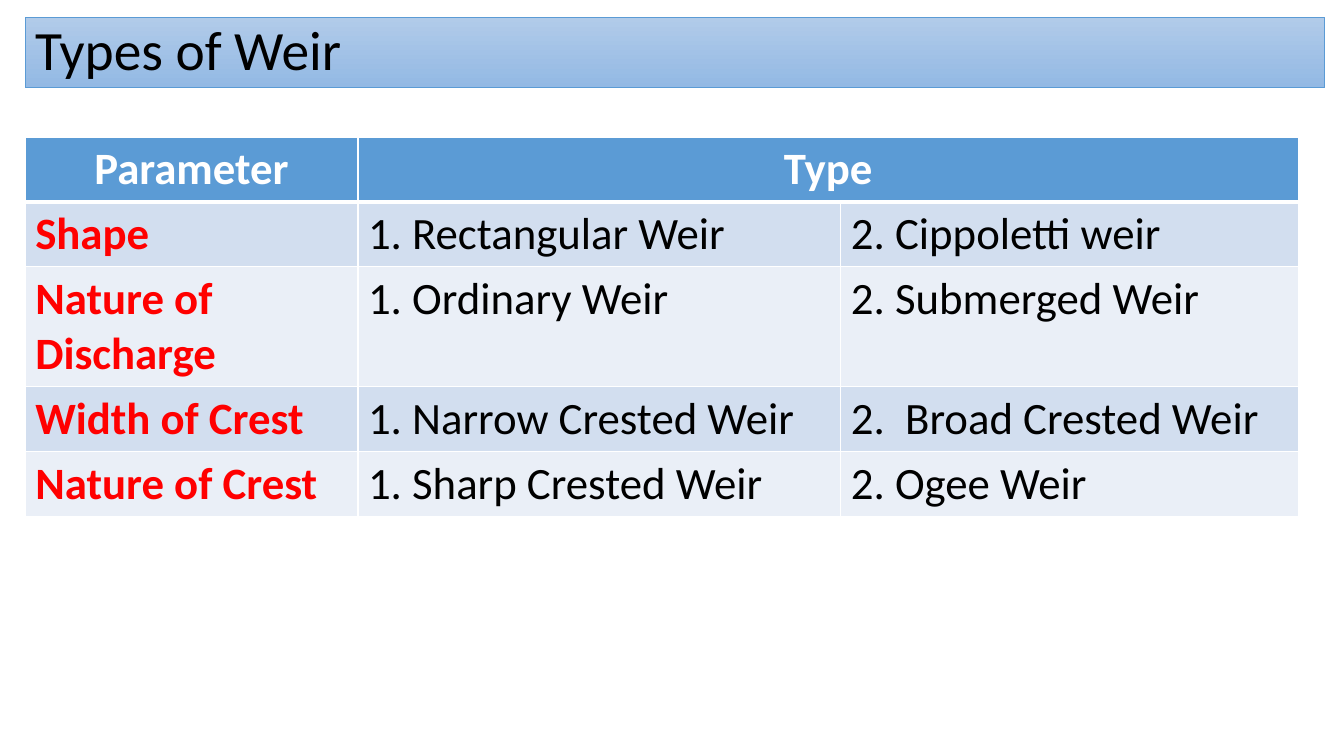
from lxml.etree import SubElement
from pptx import Presentation
from pptx.dml.color import RGBColor
from pptx.enum.shapes import MSO_SHAPE
from pptx.enum.text import MSO_ANCHOR, PP_ALIGN
from pptx.oxml.ns import qn
from pptx.util import Inches, Pt

COLORS = {
    "white": "FFFFFF", "black": "000000", "red": "FF0000", "blue": "5B9BD5",
    "top": "B1CBE9", "base": "93B9E4", "odd": "D2DEEF", "even": "EAEFF7",
}
ROWS = [
    ("Parameter", "Type"),
    ("Shape", "1. Rectangular Weir", "2. Cippoletti weir"),
    ("Nature of Discharge", "1. Ordinary Weir", "2. Submerged Weir"),
    ("Width of Crest", "1. Narrow Crested Weir", "2.  Broad Crested Weir"),
    ("Nature of Crest", "1. Sharp Crested Weir", "2. Ogee Weir"),
]
WIDTHS = (3.3, 4.79, 4.54)


def tint(name):
    """Return the named colour."""
    return RGBColor.from_string(COLORS[name])


def write(para, text, size, color, bold=False):
    """Add one styled run to a paragraph."""
    run = para.add_run()
    run.text = text
    font = run.font
    font.name, font.size, font.bold = "Calibri", Pt(size), bold
    font.color.rgb = tint(color)


def edge(cell, sides):
    """Draw white borders of the given point widths on a cell."""
    props = cell._tc.get_or_add_tcPr()
    for side, width in sides.items():
        line = SubElement(props, qn(f"a:ln{side}"), w=str(Pt(width)))
        fill = SubElement(line, qn("a:solidFill"))
        SubElement(fill, qn("a:srgbClr"), val=COLORS["white"])


def banner(slide, left, top, width, height):
    """Place the gradient title bar."""
    bar = slide.shapes.add_shape(MSO_SHAPE.RECTANGLE, Inches(left), Inches(top),
                                 Inches(width), Inches(height))
    bar.shadow.inherit = False
    bar.fill.gradient()
    bar.fill.gradient_angle = 270
    for stop, name in zip(bar.fill.gradient_stops, ("top", "base")):
        stop.color.rgb = tint(name)
    bar.line.color.rgb = tint("blue")
    bar.line.width = Pt(0.5)
    frame = bar.text_frame
    frame.word_wrap = True
    frame.vertical_anchor = MSO_ANCHOR.MIDDLE
    para = frame.paragraphs[0]
    para.alignment = PP_ALIGN.LEFT
    para.line_spacing = 0.9
    write(para, "Types of Weir", 39.6, "black")


def grid(slide, left, top, width, height):
    """Place the table of weir types."""
    frame = slide.shapes.add_table(len(ROWS), len(WIDTHS), Inches(left), Inches(top),
                                   Inches(width), Inches(height))
    table = frame.table
    table.cell(0, 1).merge(table.cell(0, 2))
    for col, size in zip(table.columns, WIDTHS):
        col.width = Inches(size)
    for i, texts in enumerate(ROWS):
        table.rows[i].height = Inches(0.41)
        head = i == 0
        shade = "blue" if head else "odd" if i % 2 else "even"
        for j, text in enumerate(texts):
            cell = table.cell(i, j)
            edge(cell, {"L": 1, "R": 1, "T": 3 if i == 1 else 1, "B": 3 if head else 1})
            cell.fill.solid()
            cell.fill.fore_color.rgb = tint(shade)
            para = cell.text_frame.paragraphs[0]
            para.alignment = PP_ALIGN.CENTER if head else PP_ALIGN.LEFT
            color = "white" if head else "black" if j else "red"
            write(para, text, 32, color, head or j == 0)
    frame.height = Inches(height)


def main():
    """Build and save the slide."""
    deck = Presentation()
    deck.slide_width, deck.slide_height = Inches(13.33), Inches(7.5)
    slide = deck.slides.add_slide(deck.slide_layouts[6])
    banner(slide, 0.25, 0.17, 12.89, 0.7)
    grid(slide, 0.25, 1.36, 12.64, 3.7)
    deck.save("out.pptx")


if __name__ == "__main__":
    main()
